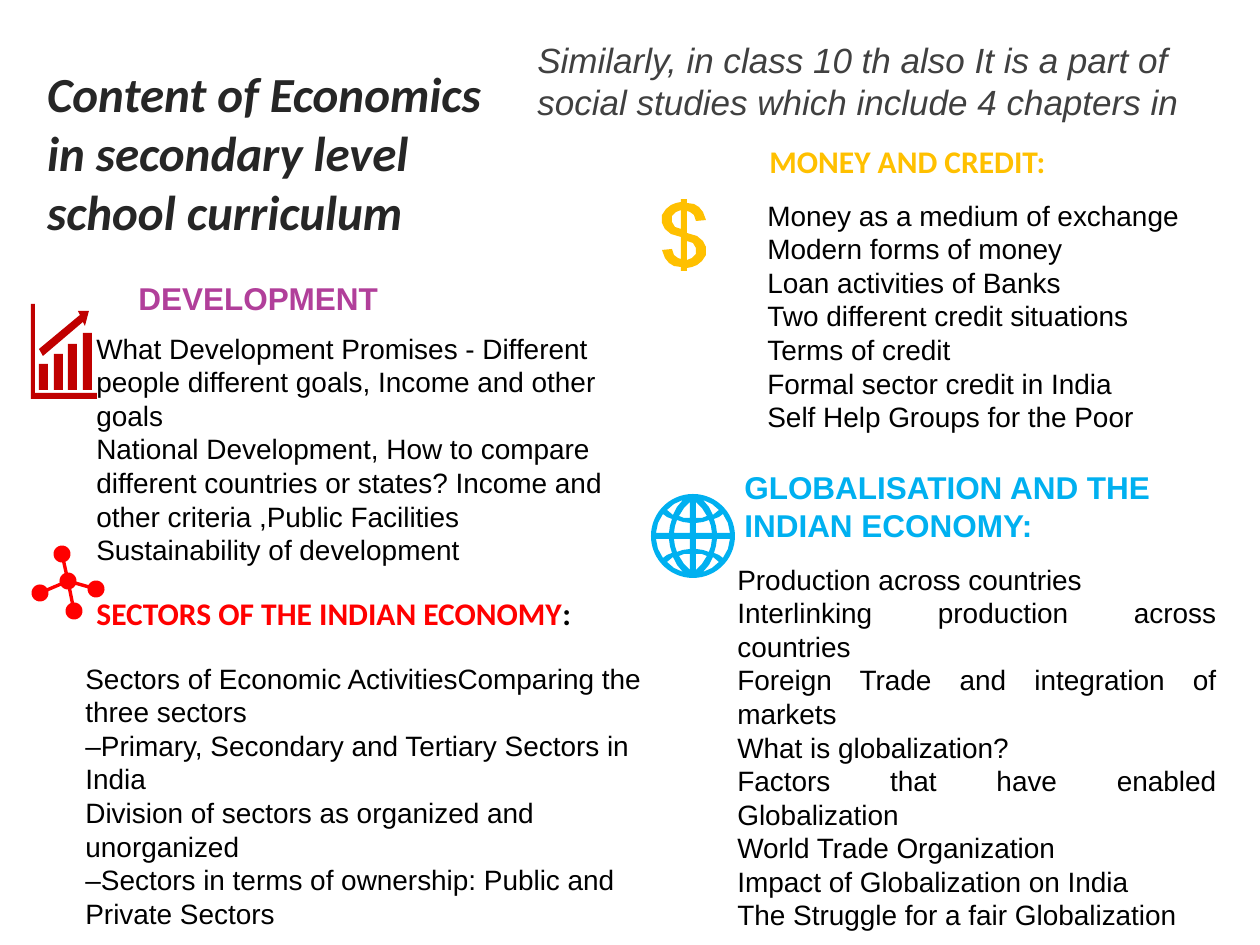
from math import atan2, cos, hypot, pi, sin

from pptx import Presentation
from pptx.dml.color import RGBColor
from pptx.enum.text import MSO_ANCHOR, MSO_AUTO_SIZE, PP_ALIGN
from pptx.util import Pt

EMU_PER_PX = 914400 / 126
LEFT, JUSTIFY = PP_ALIGN.LEFT, PP_ALIGN.JUSTIFY
MIDDLE = MSO_ANCHOR.MIDDLE
FIT_SHAPE = MSO_AUTO_SIZE.SHAPE_TO_FIT_TEXT

BLACK = RGBColor(0x00, 0x00, 0x00)
CHARCOAL = RGBColor(0x26, 0x26, 0x26)
GRAY = RGBColor(0x40, 0x40, 0x40)
PURPLE = RGBColor(0xB1, 0x3F, 0x9A)
SKY = RGBColor(0x00, 0xB0, 0xF0)
AMBER = RGBColor(0xFF, 0xC0, 0x00)
RED = RGBColor(0xFF, 0x00, 0x00)
DARK_RED = RGBColor(0xC0, 0x00, 0x00)

# Chapter: heading (text, box, font, colour), topics box, alignment, topics
CHAPTERS = [
    (("DEVELOPMENT", (126, 273, 368, 53), "Arial", PURPLE),
     (84, 325, 557, 285), LEFT,
     ["What Development Promises - Different people different goals, "
      "Income and other goals",
      "National Development, How to compare different countries or states? "
      "Income and other criteria ,Public Facilities "
      "Sustainability of development"]),
    (("SECTORS OF THE INDIAN ECONOMY", (84, 588, 546, 50), "Calibri", RED),
     (73, 655, 609, 285), LEFT,
     ["Sectors of Economic ActivitiesComparing the three sectors",
      "–Primary, Secondary and Tertiary Sectors in India",
      "Division of sectors as organized and unorganized",
      "–Sectors in terms of ownership: Public and Private Sectors"]),
    (("MONEY AND CREDIT:", (757, 136, 449, 50), "Calibri", AMBER),
     (755, 192, 474, 271), LEFT,
     ["Money as a medium of exchange", "Modern forms of money",
      "Loan activities of Banks", "Two different credit situations",
      "Terms of credit", "Formal sector credit in India",
      "Self Help Groups for the Poor"]),
    (("GLOBALISATION AND THE INDIAN ECONOMY:", (732, 462, 476, 45), "Arial", SKY),
     (725, 556, 504, 316), JUSTIFY,
     ["Production across countries",
      "Interlinking production across countries",
      "Foreign Trade and integration of markets",
      "What is globalization?",
      "Factors that have enabled Globalization",
      "World Trade Organization", "Impact of Globalization on India",
      "The Struggle for a fair Globalization"]),
]


def px(length):
    return round(length * EMU_PER_PX)


def add_text(slide, box, lines, size, color, font="Arial", bold=False,
             italic=False, align=LEFT):
    frame = slide.shapes.add_textbox(*map(px, box)).text_frame
    frame.word_wrap = True
    frame.auto_size = FIT_SHAPE
    frame.text = "\n".join(lines)
    for paragraph in frame.paragraphs:
        paragraph.alignment = align
        paragraph.font.name = font
        paragraph.font.size = Pt(size)
        paragraph.font.bold = bold
        paragraph.font.italic = italic
        paragraph.font.color.rgb = color
    return frame


def add_icon(slide, contours, color, center=(0, 0)):
    """One filled outline; inner contours become holes."""
    builder = None
    for contour in contours:
        start, *rest = [(px(center[0] + x), px(center[1] + y)) for x, y in contour]
        if builder is None:
            builder = slide.shapes.build_freeform(*start)
        else:
            builder.move_to(*start)
        builder.add_line_segments(rest, close=True)
    icon = builder.convert_to_shape()
    icon.shadow.inherit = False
    icon.fill.solid()
    icon.fill.fore_color.rgb = color
    icon.line.fill.background()


def arc(x, y, radius, start, end, steps=24):
    angles = [start + (end - start) * i / steps for i in range(steps + 1)]
    return [(x + radius * cos(a), y + radius * sin(a)) for a in angles]


def add_growth_icon(slide):
    bars = [[(x, top), (x + 9, top), (x + 9, 390), (x, 390)]
            for x, top in zip((39, 54, 68, 83), (364, 354, 344, 333))]
    arrow = [(78, 311), (89, 311), (85, 326), (83, 322), (43, 356), (39, 349), (80, 315)]
    axes = [(31, 304), (35, 304), (35, 393), (97, 393), (97, 399), (31, 399)]
    add_icon(slide, bars + [arrow, axes], DARK_RED)


def add_network_icon(slide):
    hub_x, hub_y, radius, gap = 68, 581, 8.5, 0.2
    nodes = sorted((atan2(y - hub_y, x - hub_x), x, y)
                   for x, y in [(62, 554), (96, 589), (74, 611), (40, 593)])
    outline = []
    for i, (angle, x, y) in enumerate(nodes):
        following = nodes[(i + 1) % len(nodes)][0]
        if following < angle:
            following += 2 * pi
        outline += arc(x, y, radius, angle - pi + gap, angle + pi - gap)
        outline += arc(hub_x, hub_y, radius, angle + gap, following - gap, 8)
    add_icon(slide, [outline], RED)


def add_globe_icon(slide):
    # Openings of one quarter, mirrored into the other three
    openings = [
        [(3, 3), (3, 13), (10, 14), (16, 16), (18, 10), (19, 3)],
        [(24, 3), (23, 10), (21, 17), (26, 19), (30, 22), (35, 13), (37, 3)],
        [(3, 18), (3, 34), (9, 28), (14, 20), (9, 18)],
        [(20, 21), (16, 29), (10, 36), (19, 32), (26, 26)],
    ]
    contours = [arc(0, 0, 42, 0, 2 * pi, 60)]
    for side in (1, -1):
        for half in (1, -1):
            contours += [[(side * x, half * y) for x, y in opening]
                         for opening in openings]
    add_icon(slide, contours, SKY, (693, 536))


def add_dollar_icon(slide):
    # Half of the sign; the other half is the same turned around the centre
    edge = [(-3, -36), (3, -36), (3, -32), (10, -31), (15, -28), (19, -23),
            (22, -15), (12, -14), (10, -20), (6, -23), (3, -24), (3, -2),
            (13, 1), (19, 6), (22, 12), (22, 20), (18, 26), (13, 30),
            (8, 32), (3, 33)]
    bowl = [(3, 6), (3, 25), (8, 23), (12, 19), (12, 13), (9, 8)]
    turned_edge, turned_bowl = ([(-x, -y) for x, y in part] for part in (edge, bowl))
    add_icon(slide, [edge + turned_edge, bowl, turned_bowl], AMBER, (684, 235))


def add_chapter(slide, heading, topics_box, align, topics):
    title, title_box, font, color = heading
    add_text(slide, topics_box, topics, 16, BLACK, align=align)
    return add_text(slide, title_box, [title], 18, color, font, bold=True)


def main():
    prs = Presentation()
    prs.slide_width, prs.slide_height = px(1260), px(945)
    slide = prs.slides.add_slide(prs.slide_layouts[6])

    # Title and introduction
    title = add_text(slide, (42, 63, 462, 178),
                     ["Content of Economics in secondary level school curriculum"],
                     28, CHARCOAL, "Calibri", bold=True, italic=True)
    title.vertical_anchor = MIDDLE
    title.margin_left = title.margin_right = px(5)
    title.margin_top = title.margin_bottom = 0
    add_text(slide, (525, 32, 693, 97),
             ["Similarly, in class 10 th also It is a part of social studies "
              "which include 4 chapters in"], 20, GRAY, italic=True)

    # Four chapters; the colon of the sectors heading is black
    headings = [add_chapter(slide, *chapter) for chapter in CHAPTERS]
    colon = headings[1].paragraphs[0].add_run()
    colon.text = ":"
    colon.font.color.rgb = BLACK

    # Chapter icons
    add_growth_icon(slide)
    add_network_icon(slide)
    add_dollar_icon(slide)
    add_globe_icon(slide)

    prs.save("out.pptx")


if __name__ == "__main__":
    main()
